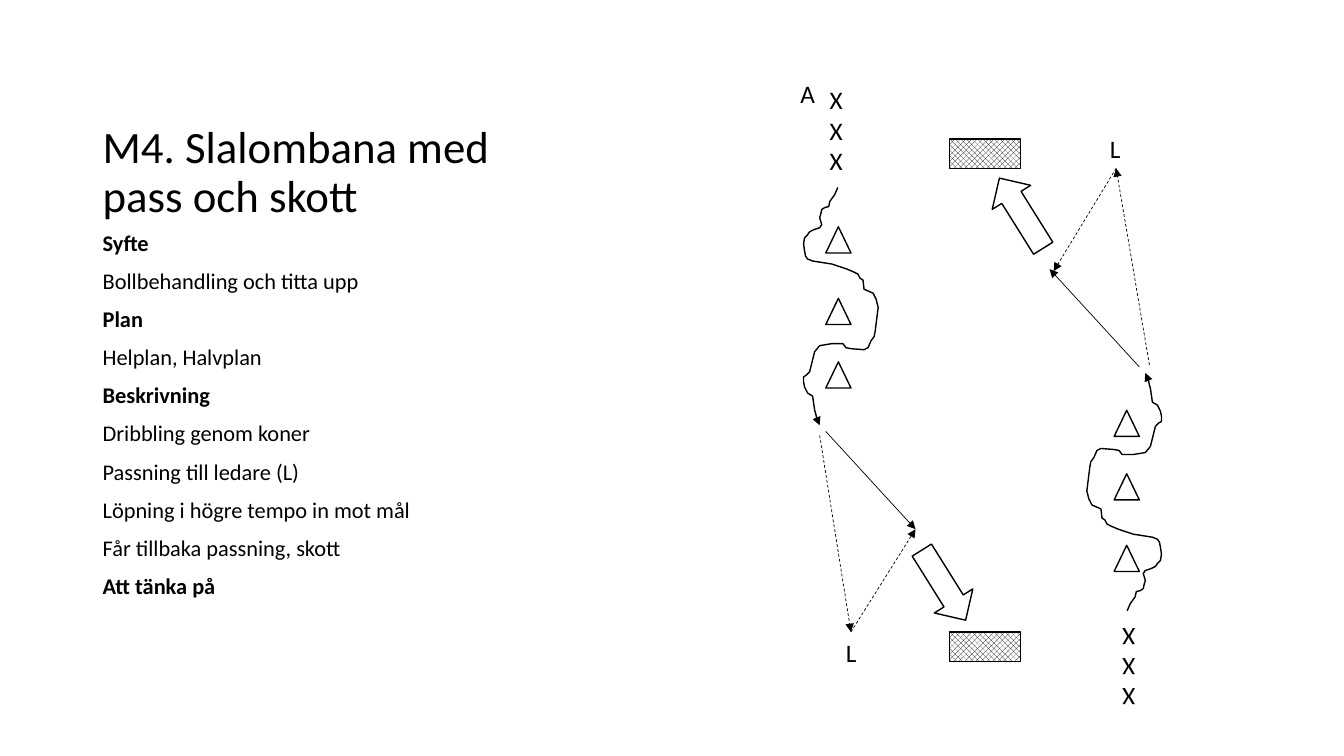
from lxml.etree import SubElement
from pptx import Presentation
from pptx.dml.color import RGBColor
from pptx.enum.dml import MSO_LINE as Dash, MSO_PATTERN as Pat
from pptx.enum.shapes import MSO_CONNECTOR as Conn, MSO_SHAPE as Kind
from pptx.enum.text import MSO_ANCHOR as Anchor, MSO_AUTO_SIZE as Auto
from pptx.oxml.ns import qn
from pptx.util import Pt

PX = 9144  # EMU per px, 100 px to the inch
BLACK = RGBColor(0, 0, 0)
WHITE = RGBColor(255, 255, 255)

TITLE = "M4. Slalombana med pass och skott"
# Text and whether it is a heading
BODY = [
    ("Syfte", True),
    ("Bollbehandling och titta upp", False),
    ("Plan", True),
    ("Helplan, Halvplan", False),
    ("Beskrivning", True),
    ("Dribbling genom koner", False),
    ("Passning till ledare (L)", False),
    ("Löpning i högre tempo in mot mål", False),
    ("Får tillbaka passning, skott", False),
    ("Att tänka på", True),
]

# Dribbling route round the cones, within its own box
ROUTE = [
    (34, 0), (31, 7), (26, 14), (25, 19), (21, 20), (18, 22), (17, 27),
    (16, 30), (18, 37), (16, 40), (10, 42), (6, 44), (4, 47), (1, 50),
    (0, 56), (1, 63), (2, 68), (4, 71), (9, 73), (28, 76), (40, 80),
    (43, 81), (50, 84), (54, 86), (56, 90), (59, 92), (60, 101),
    (69, 105), (72, 111), (74, 119), (71, 143), (70, 148), (67, 152),
    (64, 159), (60, 161), (47, 160), (42, 159), (39, 155), (28, 155),
    (16, 157), (11, 163), (9, 171), (8, 175), (6, 183), (3, 186),
    (0, 188), (0, 193), (1, 198), (4, 204), (9, 207), (11, 221),
    (12, 224), (13, 229), (15, 233), (16, 236),
]


def emu(*nums):
    return [round(n * PX) for n in nums]


def write(slide, box, rows, size, wrap=True, para={}, frame={}):
    """Text box; rows are pairs of text and bold."""
    item = slide.shapes.add_textbox(*emu(*box))
    text = item.text_frame
    text.word_wrap = wrap
    for key, val in frame.items():
        setattr(text, key, val)
    for i, (words, bold) in enumerate(rows):
        par = text.paragraphs[0] if i == 0 else text.add_paragraph()
        for key, val in para.items():
            setattr(par, key, val)
        run = par.add_run()
        run.text = words
        look = {"name": "Calibri", "size": Pt(size), "bold": bold}
        for key, val in look.items():
            setattr(run.font, key, val)
        run.font.color.rgb = BLACK
    return item


def mark(slide, box, words):
    """Player letters, one a line."""
    rows = [(char, False) for char in words]
    return write(slide, box, rows, 18, False, frame={"auto_size": Auto.SHAPE_TO_FIT_TEXT})


def ink(item, width):
    item.line.color.rgb = BLACK
    item.line.width = Pt(width)


def tip(item):
    """Arrowhead at the end of a line."""
    line = item.element.spPr.find(qn("a:ln"))
    SubElement(line, qn("a:tailEnd"), type="triangle")


def shape(slide, kind, box, turn=0):
    item = slide.shapes.add_shape(kind, *emu(*box))
    item.shadow.inherit = False
    item.fill.solid()
    item.fill.fore_color.rgb = WHITE
    item.rotation = turn
    ink(item, 1)
    return item


def arrow(slide, start, end, dash):
    item = slide.shapes.add_connector(Conn.STRAIGHT, *emu(*start, *end))
    ink(item, 0.5)
    if dash:
        item.line.dash_style = Dash.DASH
    tip(item)
    SubElement(item.element.spPr, qn("a:effectLst"))


def notes(slide, box):
    """Title above the list of instructions."""
    left, top, wide, high = box
    head = 175
    write(slide, (left, top, wide, head), [(TITLE, False)], 32,
          para={"line_spacing": 0.9}, frame={"vertical_anchor": Anchor.BOTTOM})
    write(slide, (left, top + head, wide, high - head), BODY, 16,
          para={"line_spacing": 0.9, "space_before": Pt(10)})


def half(slide, box, turned):
    """One team's drill; the other team's is turned half round the box centre."""
    left, top, wide, high = box
    turn = 180 if turned else 0

    def spot(x, y, dx=0, dy=0):
        if turned:
            x, y = wide - x + dx, high - y + dy
        return left + x, top + y

    def area(x, y, w, h, *nudge):
        if turned:
            x, y = x + w, y + h
        return *spot(x, y, *nudge), w, h

    # Waiting players and leader
    mark(slide, area(29, 6, 33, 101), "XXX").rotation = turn
    mark(slide, area(45, 554, 31, 40, 2, 2), "L")

    # Cones and shot
    for y in (152, 223, 286):
        shape(slide, Kind.ISOSCELES_TRIANGLE, area(35, y, 25, 26))
    shape(slide, Kind.RIGHT_ARROW, area(111, 485, 82, 45), 58 + turn)

    # Dribbling
    dots = [spot(x + 13, y + 113) for x, y in ROUTE]
    trace = slide.shapes.build_freeform(*dots[0], scale=PX)
    trace.add_line_segments(dots[1:], close=False)
    trail = trace.convert_to_shape()
    trail.shadow.inherit = False
    trail.fill.background()
    ink(trail, 1)
    tip(trail)

    # Run, then the pass to the leader and back
    arrow(slide, spot(35, 355), spot(124, 452), False)
    turns = [spot(29, 359, 4, 2), spot(60, 554, 2, 2), spot(124, 452, 4, 2)]
    for start, end in zip(turns, turns[1:]):
        arrow(slide, start, end, True)


def field(slide, box):
    left, top, wide, high = box
    # Goals
    for y in (65, 554):
        goal = shape(slide, Kind.RECTANGLE, (left + 158, top + y, 70, 29))
        goal.fill.patterned()
        goal.fill.pattern = Pat.OUTLINED_DIAMOND
        goal.fill.fore_color.rgb = BLACK
        goal.fill.back_color.rgb = WHITE
    for turned in (False, True):
        half(slide, box, turned)
    mark(slide, (left, top, 35, 40), "A")


def main():
    deck = Presentation()
    deck.slide_width, deck.slide_height = emu(1333, 750)
    slide = deck.slides.add_slide(deck.slide_layouts[6])
    notes(slide, (92, 50, 430, 592))
    field(slide, (784, 73, 381, 646))
    deck.save("out.pptx")


if __name__ == "__main__":
    main()
